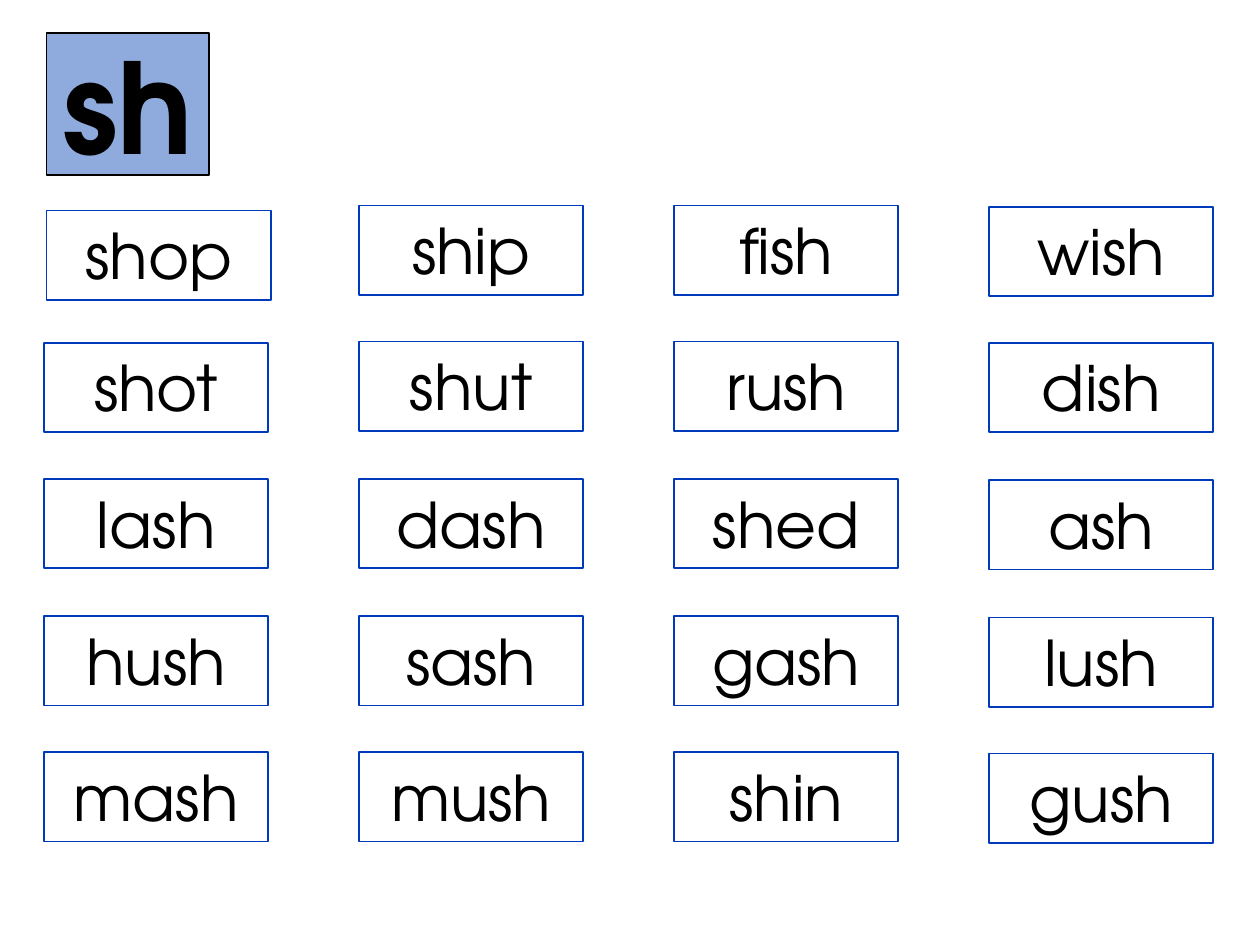
from pptx import Presentation
from pptx import util as u
from pptx.dml.color import RGBColor
from pptx.enum import shapes, text

PX = 9144  # 100 px to the inch
FONT = "TeX Gyre Adventor"
WORDS = [
    ["shop", "ship", "fish", "wish"],
    ["shot", "shut", "rush", "dish"],
    ["lash", "dash", "shed", "ash"],
    ["hush", "sash", "gash", "lush"],
    ["mash", "mush", "shin", "gush"],
]
# Small shifts of single cards, by (row, column)
NUDGES = {(0, 0): (2, 4), (1, 0): (0, 1)}


def color(value):
    return RGBColor.from_string(value)


def add_card(s, box, label, size, fill, line, anchor, bold=False):
    """Outlined rectangle with one centred label."""
    sp = s.shapes.add_shape(shapes.MSO_SHAPE.RECTANGLE, *(v * PX for v in box))
    sp.shadow.inherit = False
    sp.fill.solid()
    sp.fill.fore_color.rgb = color(fill)
    sp.line.color.rgb = color(line)
    sp.line.width = u.Pt(1)
    tf = sp.text_frame
    tf.word_wrap = True
    tf.vertical_anchor = anchor
    p = tf.paragraphs[0]
    p.text = label
    p.alignment = text.PP_ALIGN.CENTER
    p.font.name = FONT
    p.font.size = u.Pt(size)
    p.font.bold = bold
    p.font.color.rgb = color("000000")
    return sp


def add_word_grid(s, box):
    """Word cards spread evenly over the box."""
    left, top, width, height = box
    card_w, card_h = 178, 71
    step_x = (width - card_w) / (len(WORDS[0]) - 1)
    step_y = (height - card_h) / (len(WORDS) - 1)
    for row, words in enumerate(WORDS):
        for col, word in enumerate(words):
            # The last column sits one px lower
            dx, dy = NUDGES.get((row, col), (0, int(col == 3)))
            x = left + round(col * step_x) + dx
            y = top + round(row * step_y) + dy
            sp = add_card(s, (x, y, card_w, card_h), word, 36, "FFFFFF",
                          "003ABC", text.MSO_ANCHOR.TOP)
            sp.text_frame.auto_size = text.MSO_AUTO_SIZE.SHAPE_TO_FIT_TEXT


def main():
    prs = Presentation()
    prs.slide_width, prs.slide_height = 1000 * PX, 750 * PX
    s = prs.slides.add_slide(prs.slide_layouts[6])
    add_word_grid(s, (35, 163, 928, 505))
    # Sound tile
    add_card(s, (37, 26, 129, 113), "sh", 72, "8FAADC", "000000",
             text.MSO_ANCHOR.MIDDLE, bold=True)
    prs.save("out.pptx")


if __name__ == "__main__":
    main()
